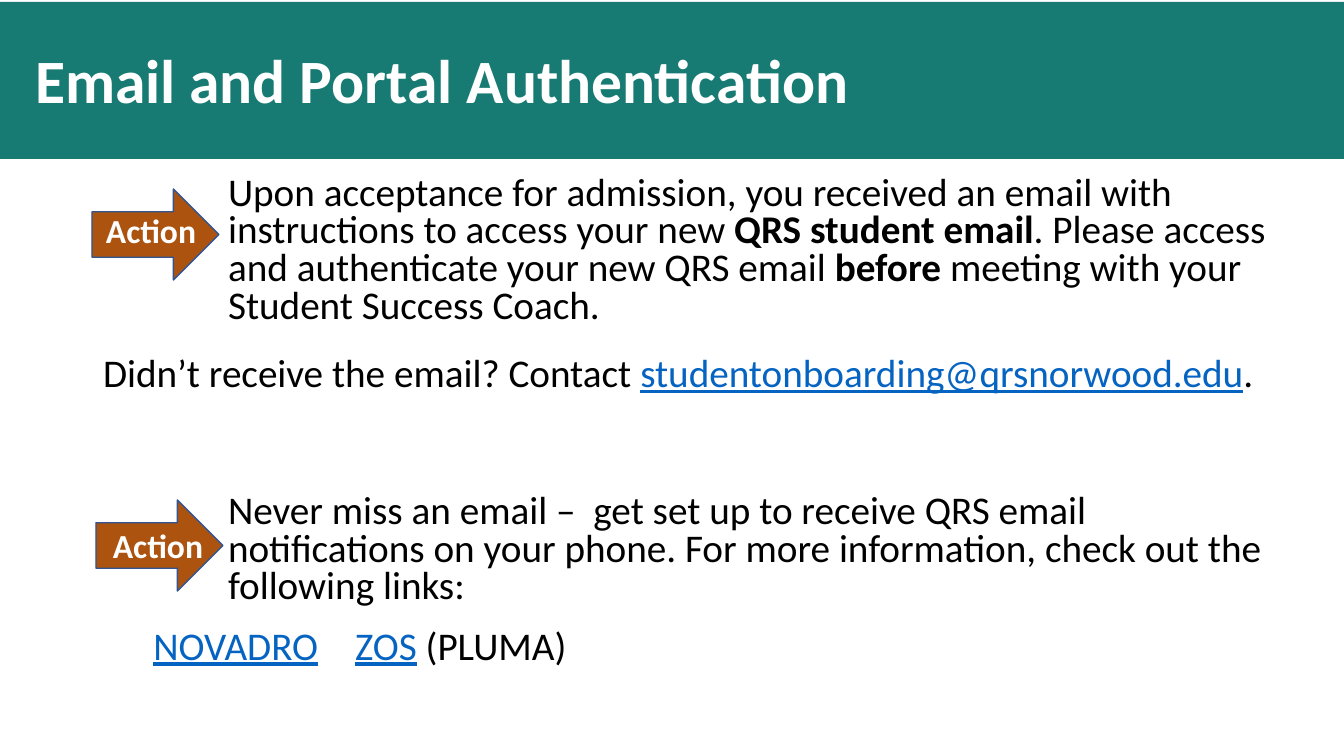
"""Build the slide on email and portal authentication."""
from lxml import etree
from pptx import Presentation
from pptx.dml.color import RGBColor
from pptx.enum.shapes import MSO_SHAPE
from pptx.enum.text import MSO_ANCHOR, MSO_AUTO_SIZE, PP_ALIGN
from pptx.oxml.ns import qn
from pptx.util import Pt

SCALE = 914400 / 100.8
RECT, ARROW = MSO_SHAPE.RECTANGLE, MSO_SHAPE.RIGHT_ARROW
MIDDLE, TOP = MSO_ANCHOR.MIDDLE, MSO_ANCHOR.TOP
FIXED, LEFT = MSO_AUTO_SIZE.NONE, PP_ALIGN.LEFT
FONT = "Calibri"
COLORS = {"teal": "177B73", "rust": "AB530F", "edge": "325491",
          "link": "0563C1", "black": "000000", "white": "FFFFFF"}
BOLD = {"bold": True}
LINK = {"color": "link", "under": True}
INDENT = 125
STOPS = (226, 630)
BODY = [
    ([("Upon acceptance for admission, you received an email with "
       "instructions to access your new ", {}),
      ("QRS student email", BOLD),
      (". Please access and authenticate your new QRS email ", {}),
      ("before", BOLD),
      (" meeting with your Student Success Coach.", {})],
     {"indent": INDENT}),
    ([("Didn’t receive the email? Contact ", {}),
      ("studentonboarding@qrsnorwood.edu", LINK), (".", {})], {}),
    ([("Never miss an email –  get set up to receive QRS email "
       "notifications on your phone. For more information, check out the "
       "following links:", {})],
     {"indent": INDENT, "before": 59, "after": 6}),
    ([("\t", {}), ("NOVADRO", LINK), ("\t", {}), ("ZOS", LINK),
      (" (PLUMA)", {})], {"stops": STOPS}),
]
STEPS = [((92, 189), (96, 205)), ((96, 500), (103, 520))]


def px(num):
    """Turn pixels into EMU."""
    return round(num * SCALE)


def rgb(name):
    """Look up a colour by name."""
    return RGBColor.from_string(COLORS[name])


def write(para, text, size=28, color="black", bold=False, under=False):
    """Add a formatted run to a paragraph."""
    run = para.add_run()
    run.text = text
    font = run.font
    font.name, font.size = FONT, Pt(size)
    font.bold, font.underline = bold, under
    font.color.rgb = rgb(color)


def place(shape, left, top, width, height):
    """Move and size a shape."""
    shape.left, shape.top = px(left), px(top)
    shape.width, shape.height = px(width), px(height)


def setup(frame, anchor):
    """Give a text frame wrapping, a fixed size and an anchor."""
    frame.word_wrap = True
    frame.auto_size = FIXED
    frame.vertical_anchor = anchor


def layout(para, indent=0, before=10, after=12, stops=()):
    """Set spacing, indent and tab stops of a plain list paragraph."""
    para.alignment, para.line_spacing = LEFT, 0.8
    para.space_before, para.space_after = Pt(before), Pt(after)
    props = para._p.get_or_add_pPr()
    props.set("marL", str(px(indent)))
    props.set("indent", "0")
    etree.SubElement(props, qn("a:buNone"))
    if stops:
        tabs = etree.SubElement(props, qn("a:tabLst"))
        for stop in stops:
            etree.SubElement(tabs, qn("a:tab"), pos=str(px(stop)), algn="l")


def block(slide, kind, box, fill, line=None):
    """Add a filled preset shape."""
    shape = slide.shapes.add_shape(kind, *map(px, box))
    shape.shadow.inherit = False
    shape.fill.solid()
    shape.fill.fore_color.rgb = rgb(fill)
    if line:
        shape.line.color.rgb = rgb(line)
        shape.line.width = Pt(1)
    else:
        shape.line.fill.background()
    return shape


def head(slide, text):
    """Fill the title on its band."""
    title = slide.shapes.title
    band = block(slide, RECT, (0, 2, 1344, 157), "teal")
    title.element.addprevious(band.element)
    place(title, 25, 32, 900, 104)
    setup(title.text_frame, MIDDLE)
    para = title.text_frame.paragraphs[0]
    para.alignment, para.line_spacing = LEFT, 0.9
    write(para, text, size=44, color="white", bold=True)


def fill_body(slide):
    """Fill the body with its paragraphs."""
    body = slide.placeholders[1]
    place(body, 93, 171, 1191, 515)
    frame = body.text_frame
    setup(frame, TOP)
    for num, (runs, form) in enumerate(BODY):
        para = frame.add_paragraph() if num else frame.paragraphs[0]
        layout(para, **form)
        for text, style in runs:
            write(para, text, **style)


def action(slide, spot, label):
    """Add an arrow with its label."""
    block(slide, ARROW, (*spot, 127, 91), "rust", "edge")
    box = slide.shapes.add_textbox(*map(px, (*label, 119, 50)))
    setup(box.text_frame, TOP)
    write(box.text_frame.paragraphs[0], "Action", size=24, color="white",
          bold=True)


def main():
    """Build and save the slide."""
    deck = Presentation()
    deck.slide_width, deck.slide_height = px(1344), px(756)
    slide = deck.slides.add_slide(deck.slide_layouts[1])
    head(slide, "Email and Portal Authentication")
    fill_body(slide)
    for spot, label in STEPS:
        action(slide, spot, label)
    deck.save("out.pptx")


if __name__ == "__main__":
    main()
